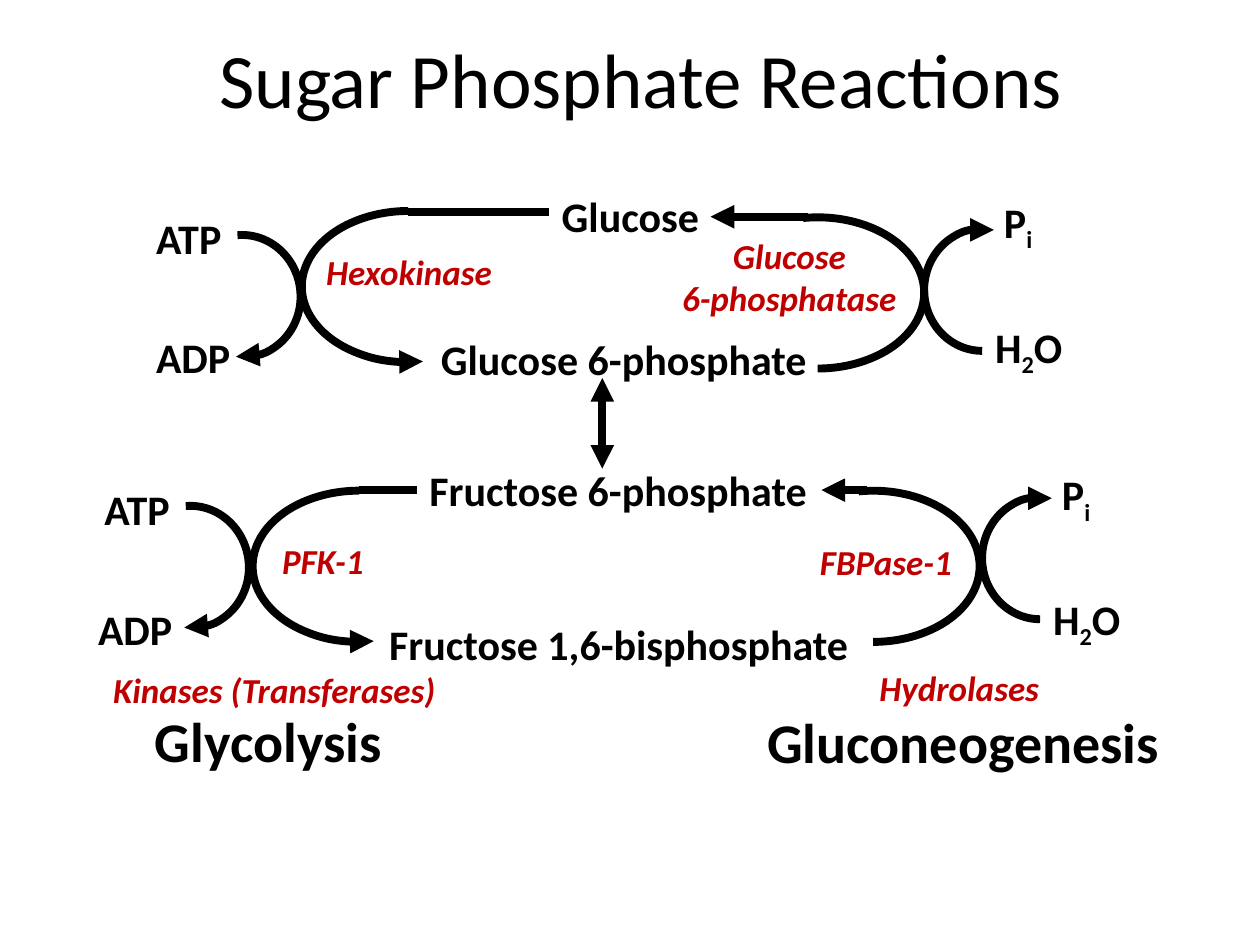
from lxml import etree
from pptx import Presentation
from pptx.dml.color import RGBColor
from pptx.enum.shapes import MSO_CONNECTOR, MSO_SHAPE
from pptx.enum.text import MSO_ANCHOR, MSO_AUTO_SIZE, PP_ALIGN
from pptx.oxml.ns import qn
from pptx.util import Pt

ARC, STRAIGHT = MSO_SHAPE.ARC, MSO_CONNECTOR.STRAIGHT
LEFT, CENTER = PP_ALIGN.LEFT, PP_ALIGN.CENTER
MIDDLE = MSO_ANCHOR.MIDDLE
GROW, FIXED = MSO_AUTO_SIZE.SHAPE_TO_FIT_TEXT, MSO_AUTO_SIZE.NONE
EMU_PER_PX = 9144
COLORS = {"ink": "000000", "enzyme": "C00000"}


def px(*values):
    return [v * EMU_PER_PX for v in values]


class Diagram:
    """Draw the parts of a reaction diagram on one slide."""

    font = "Calibri"
    stroke = 4.5
    arc_start = 101.388

    def __init__(self, slide):
        self.slide = slide

    def add_text(self, p, text, size=24, color="ink", bold=True, italic=False):
        for i, part in enumerate(text.split("|")):
            r = p.add_run()
            r.text = part
            f = r.font
            f.name, f.size, f.bold, f.italic = self.font, Pt(size), bold, italic
            f.color.rgb = RGBColor.from_string(COLORS[color])
            if i % 2:
                r._r.get_or_add_rPr().set("baseline", "-25000")

    def title(self, text, x, y, w, h):
        sp = self.slide.shapes.title
        sp.left, sp.top, sp.width, sp.height = px(x, y, w, h)
        tf = sp.text_frame
        tf.auto_size, tf.vertical_anchor = FIXED, MIDDLE
        p = tf.paragraphs[0]
        p.alignment, p.line_spacing = LEFT, 0.9
        self.add_text(p, text, size=44, bold=False)

    def label(self, text, x, y, w, h=50, align=LEFT, **style):
        tf = self.slide.shapes.add_textbox(*px(x, y, w, h)).text_frame
        tf.word_wrap, tf.auto_size = False, GROW
        for i, line in enumerate(text.split("\n")):
            p = tf.add_paragraph() if i else tf.paragraphs[0]
            p.alignment = align
            self.add_text(p, line, **style)

    def enzyme(self, text, x, y, w, h=44, **style):
        self.label(text, x, y, w, h, size=20, color="enzyme", italic=True, **style)

    def outline(self, sp, ends):
        sp.line.width = Pt(self.stroke)
        sp.line.color.rgb = RGBColor.from_string(COLORS["ink"])
        ln = sp.line._get_or_add_ln()
        for end in ends:
            etree.SubElement(ln, qn(f"a:{end}End"), type="triangle")

    def arc(self, x, y, w, h, rotation, flips, ends=()):
        sp = self.slide.shapes.add_shape(ARC, *px(x, y, w, h))
        sp.adjustments[0], sp.adjustments[1] = self.arc_start, 0
        sp.rotation = rotation
        sp.shadow.inherit = False
        sp.fill.background()
        xfrm = sp._element.spPr.get_or_add_xfrm()
        for flip in flips:
            xfrm.set(f"flip{flip}", "1")
        self.outline(sp, ends)

    def line(self, x1, y1, x2, y2, ends=()):
        sp = self.slide.shapes.add_connector(STRAIGHT, *px(x1, y1, x2, y2))
        self.outline(sp, ends)
        etree.SubElement(sp._element.spPr, qn("a:effectLst"))


def main():
    prs = Presentation()
    prs.slide_width, prs.slide_height = px(1000, 750)
    d = Diagram(prs.slides.add_slide(prs.slide_layouts[5]))
    d.title("Sugar Phosphate Reactions", 164, 24, 789, 85)

    for text, x, y, w in [
        ("Glucose", 436, 146, 130),
        ("Glucose 6-phosphate", 340, 260, 314),
        ("Fructose 6-phosphate", 331, 364, 323),
        ("Fructose 1,6-bisphosphate", 299, 486, 389),
        ("ATP", 114, 164, 72),
        ("ADP", 114, 258, 80),
        ("ATP", 73, 379, 72),
        ("ADP", 68, 474, 80),
        ("P|i", 787, 151, 44),
        ("H|2|O", 780, 250, 76),
        ("P|i", 833, 367, 44),
        ("H|2|O", 826, 466, 76),
    ]:
        d.label(text, x, y, w)

    for x, y in [(264, 143), (225, 365)]:
        d.arc(x, y, 120, 169, 90, "HV", ["head"])
    for x, y in [(589, 148), (633, 365)]:
        d.arc(x, y, 120, 169, 270, "HV")
    for x, y in [(731, 184), (777, 397)]:
        d.arc(x, y, 97, 92, 90, "V", ["head"])
    for x, y in [(144, 189), (103, 404)]:
        d.arc(x, y, 97, 92, 265.2, "V", ["head"])

    d.line(641, 172, 564, 172, ["tail"])
    d.line(436, 168, 324, 168)
    d.line(331, 389, 285, 389)
    d.line(688, 389, 652, 389, ["tail"])
    d.line(478, 300, 478, 372, ["head", "tail"])

    d.enzyme("Hexokinase", 249, 194, 153)
    d.enzyme("Glucose\n6-phosphatase", 531, 181, 191, 77, align=CENTER)
    d.enzyme("PFK-1", 214, 423, 86)
    d.enzyme("FBPase-1", 641, 424, 126)
    d.enzyme("Kinases (Transferases)", 80, 526, 278)
    d.enzyme("Hydrolases", 688, 524, 148)

    d.label("Glycolysis", 113, 556, 202, 64, size=32)
    d.label("Gluconeogenesis", 599, 557, 334, 64, size=32)
    prs.save("out.pptx")


if __name__ == "__main__":
    main()
